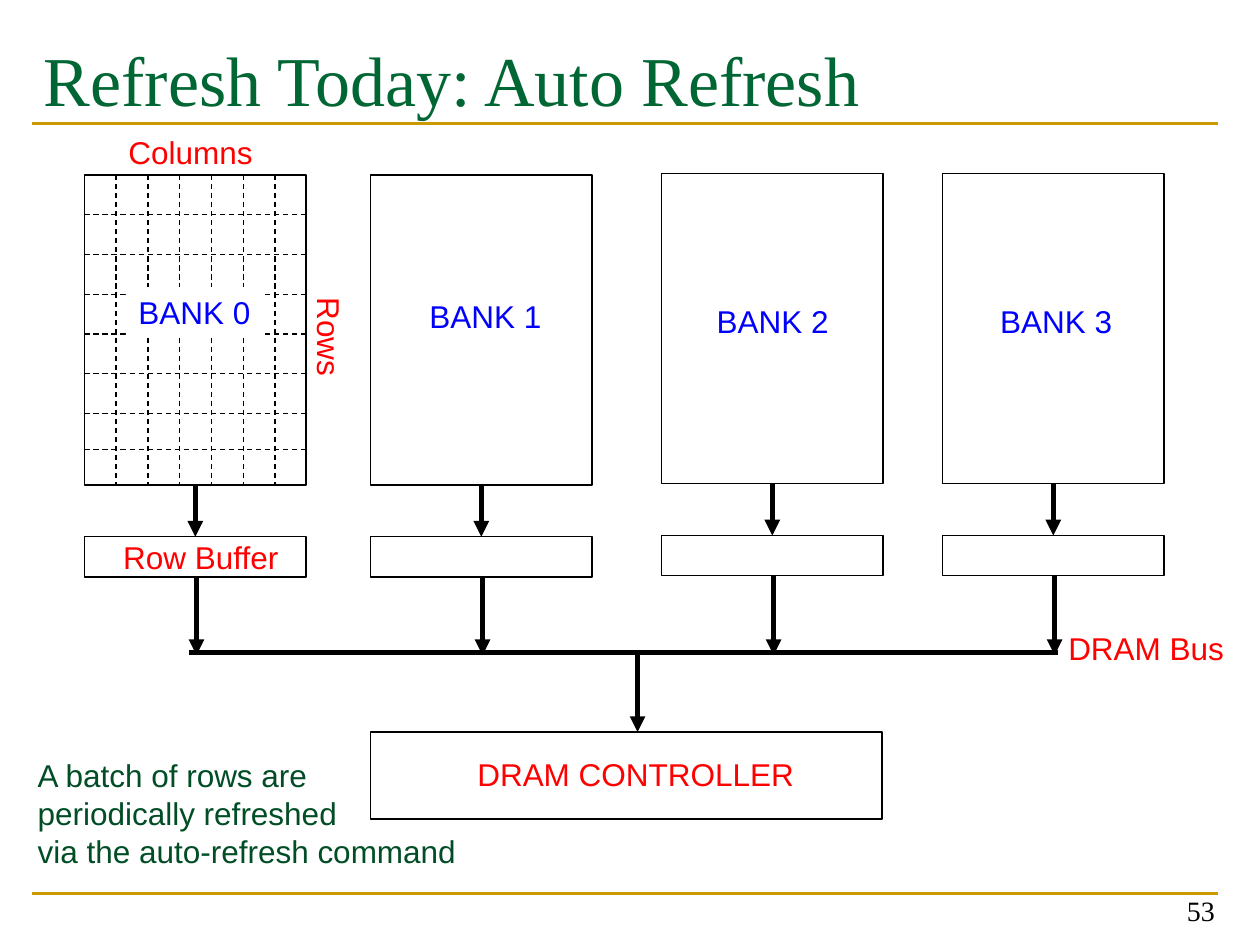
from dataclasses import dataclass

from lxml import etree
from pptx import Presentation
from pptx.dml.color import RGBColor
from pptx.enum.dml import MSO_LINE
from pptx.enum.shapes import MSO_CONNECTOR, MSO_SHAPE
from pptx.enum.text import MSO_ANCHOR, PP_ALIGN
from pptx.oxml.ns import qn
from pptx.util import Inches, Pt

RECT = MSO_SHAPE.RECTANGLE
STRAIGHT = MSO_CONNECTOR.STRAIGHT
DASH = MSO_LINE.DASH
TOP, BOTTOM = MSO_ANCHOR.TOP, MSO_ANCHOR.BOTTOM
LEFT, RIGHT = PP_ALIGN.LEFT, PP_ALIGN.RIGHT

BLACK = RGBColor(0, 0, 0)
WHITE = RGBColor(255, 255, 255)
RED = RGBColor(255, 0, 0)
BLUE = RGBColor(0, 0, 255)
GOLD = RGBColor(0xCC, 0x99, 0x00)
GREEN = RGBColor(0x00, 0x66, 0x33)
DARK = RGBColor(0x00, 0x4D, 0x26)

SANS, SERIF = "Arial", "Times New Roman"
BANK_W, BANK_H = 1.76, 2.46
BUFFER_DROP, BUFFER_H = 2.87, 0.32
BUS_Y = 5.18
ROW_STEP, COL_STEP = 0.315, 0.252


@dataclass
class Bank:
    left: float
    top: float
    name: str
    name_x: float
    name_y: float


@dataclass
class Label:
    text: str
    x: float
    y: float
    w: float
    turn: int = 0


BANKS = [
    Bank(0.67, 1.39, "BANK 0", 1.0, 2.28),
    Bank(2.94, 1.39, "BANK 1", 3.31, 2.31),
    Bank(5.25, 1.38, "BANK 2", 5.59, 2.35),
    Bank(7.48, 1.38, "BANK 3", 7.84, 2.35),
]
LABELS = [
    Label("Columns", 0.92, 1.01, 1.19),
    Label("Rows", 2.2, 2.48, 0.83, 90),
    Label("Row Buffer", 0.88, 4.22, 1.44),
    Label("DRAM CONTROLLER", 3.69, 5.94, 2.74),
    Label("DRAM Bus", 8.38, 4.94, 1.45),
]


def add_line(slide, x1: float, y1: float, x2: float, y2: float,
             width: float = 3, color: RGBColor = BLACK,
             dash: bool = False, arrow: bool = False) -> None:
    line = slide.shapes.add_connector(
        STRAIGHT, Inches(x1), Inches(y1), Inches(x2), Inches(y2))
    line.line.width = Pt(width)
    line.line.color.rgb = color
    if dash:
        line.line.dash_style = DASH
    if arrow:
        etree.SubElement(line.line._get_or_add_ln(), qn("a:tailEnd"),
                         type="triangle")
    etree.SubElement(line._element.spPr, qn("a:effectLst"))


def add_box(slide, x: float, y: float, w: float, h: float) -> None:
    box = slide.shapes.add_shape(
        RECT, Inches(x), Inches(y), Inches(w), Inches(h))
    box.shadow.inherit = False
    box.fill.background()
    box.line.color.rgb = BLACK
    box.line.width = Pt(0.75)


def add_text(slide, text: str, x: float, y: float, w: float, h: float,
             color: RGBColor, size: int = 18, font: str = SANS,
             wrap: bool = False, align=LEFT, anchor=TOP):
    box = slide.shapes.add_textbox(
        Inches(x), Inches(y), Inches(w), Inches(h))
    frame = box.text_frame
    frame.word_wrap = wrap
    frame.vertical_anchor = anchor
    frame.text = text
    for para in frame.paragraphs:
        para.alignment = align
        para.font.size = Pt(size)
        para.font.name = font
        para.font.color.rgb = color
    return box


def add_grid(slide, bank: Bank) -> None:
    """Draw the dashed rows and columns inside a bank."""
    right, base = bank.left + BANK_W, bank.top + BANK_H
    rows = [bank.top + ROW_STEP * i for i in range(1, 7)] + [3.57]
    for y in rows:
        add_line(slide, bank.left, y, right, y, 0.75, dash=True)
    for i in range(1, 7):
        x = bank.left + COL_STEP * i
        add_line(slide, x, bank.top, x, base, 0.75, dash=True)


def add_bank(slide, bank: Bank) -> None:
    """Draw a bank, its row buffer and the arrows down to the bus."""
    base = bank.top + BANK_H
    buffer = bank.top + BUFFER_DROP
    mid = bank.left + BANK_W / 2
    add_box(slide, bank.left, bank.top, BANK_W, BANK_H)
    add_box(slide, bank.left, buffer, BANK_W, BUFFER_H)
    add_line(slide, mid, base, mid, buffer, arrow=True)
    add_line(slide, mid + 0.01, buffer + BUFFER_H,
             mid + 0.01, BUS_Y + 0.02, arrow=True)


def main() -> None:
    deck = Presentation()
    deck.slide_width, deck.slide_height = Inches(10), Inches(7.5)
    slide = deck.slides.add_slide(deck.slide_layouts[6])

    for y in (7.09, 0.98):
        add_line(slide, 0.25, y, 9.67, y, 1.5, GOLD)
    title = add_text(slide, "Refresh Today: Auto Refresh",
                     0.25, 0.17, 9.42, 1.17, GREEN, 40, SERIF, wrap=True)
    title.text_frame.margin_top = Inches(0.12)
    add_text(slide, "53", 7.41, 6.91, 2.33, 0.5, BLACK, 16, SERIF,
             wrap=True, align=RIGHT, anchor=BOTTOM)

    for bank in BANKS:
        add_bank(slide, bank)
    add_grid(slide, BANKS[0])
    add_line(slide, 1.5, BUS_Y, 8.4, BUS_Y)
    add_line(slide, 5.06, BUS_Y, 5.06, 5.81, arrow=True)
    add_box(slide, 2.94, 5.81, 4.06, 0.69)

    for item in LABELS:
        box = add_text(slide, item.text, item.x, item.y, item.w, 0.4, RED)
        box.rotation = item.turn
    for bank in BANKS:
        box = add_text(slide, bank.name, bank.name_x, bank.name_y,
                       1.1, 0.4, BLUE)
        box.fill.solid()
        box.fill.fore_color.rgb = WHITE
    add_text(slide, "A batch of rows are\nperiodically refreshed\n"
             "via the auto-refresh command",
             0.2, 5.95, 3.7, 1.01, DARK, wrap=True)

    deck.save("out.pptx")


if __name__ == "__main__":
    main()
